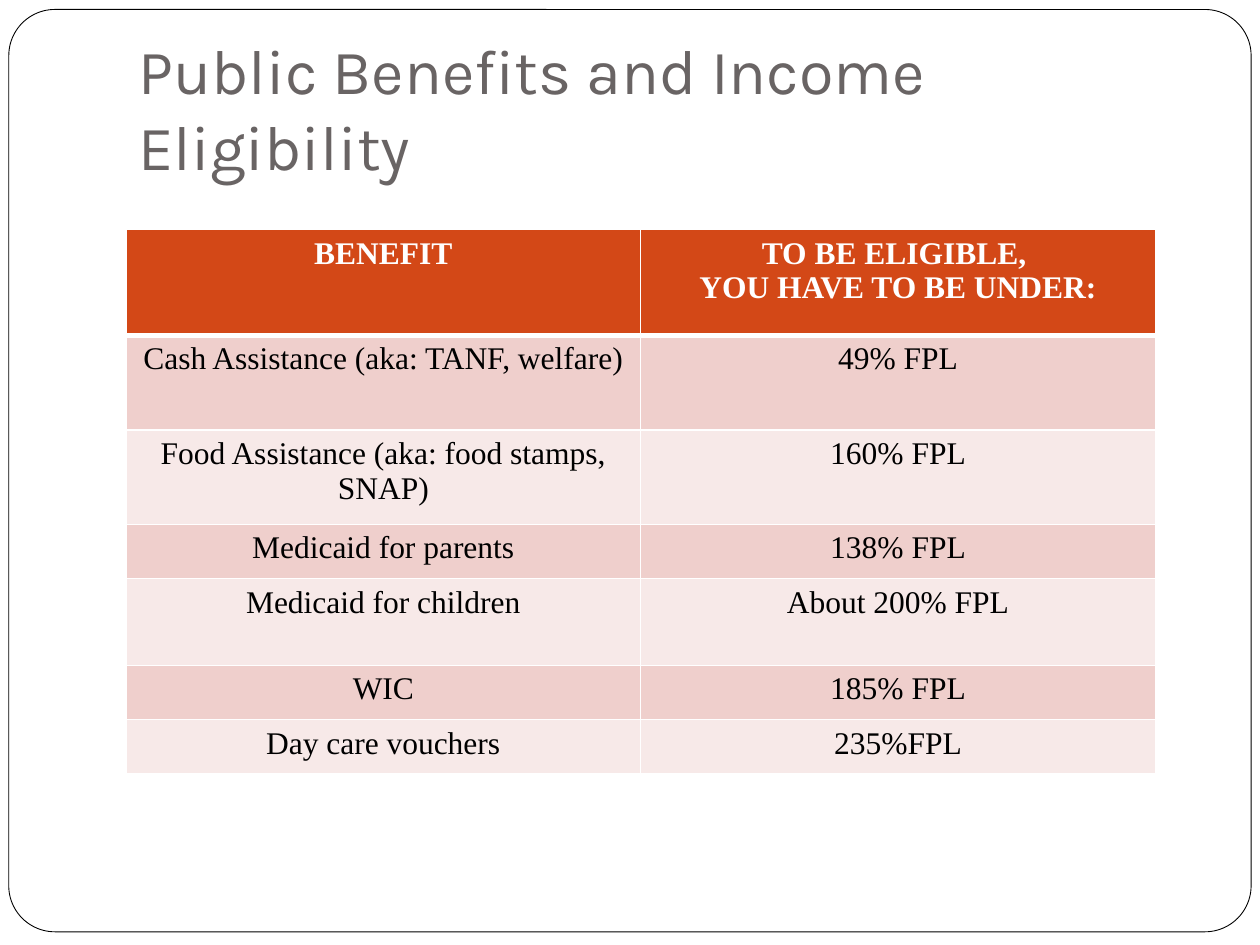
from dataclasses import dataclass

from lxml.etree import SubElement
from pptx import Presentation
from pptx.dml.color import RGBColor
from pptx.enum.shapes import MSO_SHAPE
from pptx.enum.text import MSO_ANCHOR, MSO_AUTO_SIZE, PP_ALIGN
from pptx.oxml.ns import qn
from pptx.slide import Slide
from pptx.util import Inches, Pt

WHITE = RGBColor(0xFF, 0xFF, 0xFF)
BLACK = RGBColor(0x00, 0x00, 0x00)
GRAY = RGBColor(0x69, 0x64, 0x64)
ORANGE = RGBColor(0xD3, 0x48, 0x17)
ROSE = RGBColor(0xEF, 0xCF, 0xCC)
BLUSH = RGBColor(0xF7, 0xE9, 0xE8)

WIDTH, HEIGHT = 10, 7.5
HEADER = ("BENEFIT", "TO BE ELIGIBLE, \nYOU HAVE TO BE UNDER:")
BENEFITS = [
    ("Cash Assistance (aka: TANF, welfare)", "49% FPL"),
    ("Food Assistance (aka: food stamps, SNAP)", "160% FPL"),
    ("Medicaid for parents", "138% FPL"),
    ("Medicaid for children", "About 200% FPL"),
    ("WIC", "185% FPL"),
    ("Day care vouchers", "235%FPL"),
]
ROW_HEIGHTS = (0.84, 0.75, 0.75, 0.43, 0.69, 0.43, 0.43)


@dataclass
class SlideBuilder:
    """Holds the style and the current slide, and adds each kind of element."""

    page: Slide
    title_font: str = "Karla"
    table_font: str = "Times New Roman"
    title_size: float = 36
    table_size: float = 18

    def area(self, left, top, width, height):
        """Turn shares of the slide's size into lengths."""
        return (Inches(WIDTH * left), Inches(HEIGHT * top),
                Inches(WIDTH * width), Inches(HEIGHT * height))

    def add_span(self, para, text, font, size, color, bold=False):
        """Add one formatted run to a paragraph."""
        span = para.add_run()
        span.text = text
        span.font.name = font
        span.font.size = Pt(size)
        span.font.color.rgb = color
        span.font.bold = bold

    def frame(self, *shares):
        """Draw the rounded page frame behind the title."""
        box = self.page.shapes.add_shape(MSO_SHAPE.ROUNDED_RECTANGLE, *self.area(*shares))
        box.shadow.inherit = False
        box.adjustments[0] = 0.05
        box.fill.solid()
        box.fill.fore_color.rgb = WHITE
        box.line.color.rgb = BLACK
        box.line.width = Pt(0.5)
        self.page.shapes.title.element.addprevious(box.element)

    def title(self, text, *shares):
        """Place and fill the title placeholder."""
        box = self.page.shapes.title
        box.left, box.top, box.width, box.height = self.area(*shares)
        text_frame = box.text_frame
        text_frame.word_wrap = True
        text_frame.auto_size = MSO_AUTO_SIZE.NONE
        text_frame.vertical_anchor = MSO_ANCHOR.BOTTOM
        text_frame.margin_bottom = Inches(0.1)
        para = text_frame.paragraphs[0]
        para.alignment = PP_ALIGN.LEFT
        self.add_span(para, text, self.title_font, self.title_size, GRAY)

    def borders(self, cell, **widths):
        """Draw white cell borders, with widths in points by side."""
        properties = cell._tc.get_or_add_tcPr()
        for index, side in enumerate("LRTB"):
            line = SubElement(properties, qn(f"a:ln{side}"), w=str(Pt(widths.get(side, 1))))
            fill = SubElement(line, qn("a:solidFill"))
            SubElement(fill, qn("a:srgbClr"), val=str(WHITE))
            properties.insert(index, line)

    def cell(self, cell, text, fill, color, bold):
        """Fill one table cell with centred text."""
        cell.fill.solid()
        cell.fill.fore_color.rgb = fill
        for index, line in enumerate(text.split("\n")):
            text_frame = cell.text_frame
            para = text_frame.add_paragraph() if index else text_frame.paragraphs[0]
            para.alignment = PP_ALIGN.CENTER
            self.add_span(para, line, self.table_font, self.table_size, color, bold)

    def table(self, rows, heights, *shares):
        """Add a table with a header row and banded body rows."""
        table = self.page.shapes.add_table(len(rows), len(rows[0]), *self.area(*shares)).table
        for row, height in zip(table.rows, heights):
            row.height = Inches(height)
        for number, texts in enumerate(rows):
            header = number == 0
            fill = ORANGE if header else (BLUSH, ROSE)[number % 2]
            for column, text in enumerate(texts):
                cell = table.cell(number, column)
                self.cell(cell, text, fill, WHITE if header else BLACK, header)
                self.borders(cell, T=3 if number == 1 else 1, B=3 if header else 1)


def main():
    """Build the slide and save the deck."""
    deck = Presentation()
    deck.slide_width, deck.slide_height = Inches(WIDTH), Inches(HEIGHT)
    builder = SlideBuilder(deck.slides.add_slide(deck.slide_layouts[5]))
    builder.frame(0.007, 0.01, 0.986, 0.976)
    builder.title("Public Benefits and Income Eligibility", 0.1, 0.04, 0.85, 0.167)
    builder.table([HEADER, *BENEFITS], ROW_HEIGHTS, 0.1, 0.243, 0.817, 0.577)
    deck.save("out.pptx")


if __name__ == "__main__":
    main()
